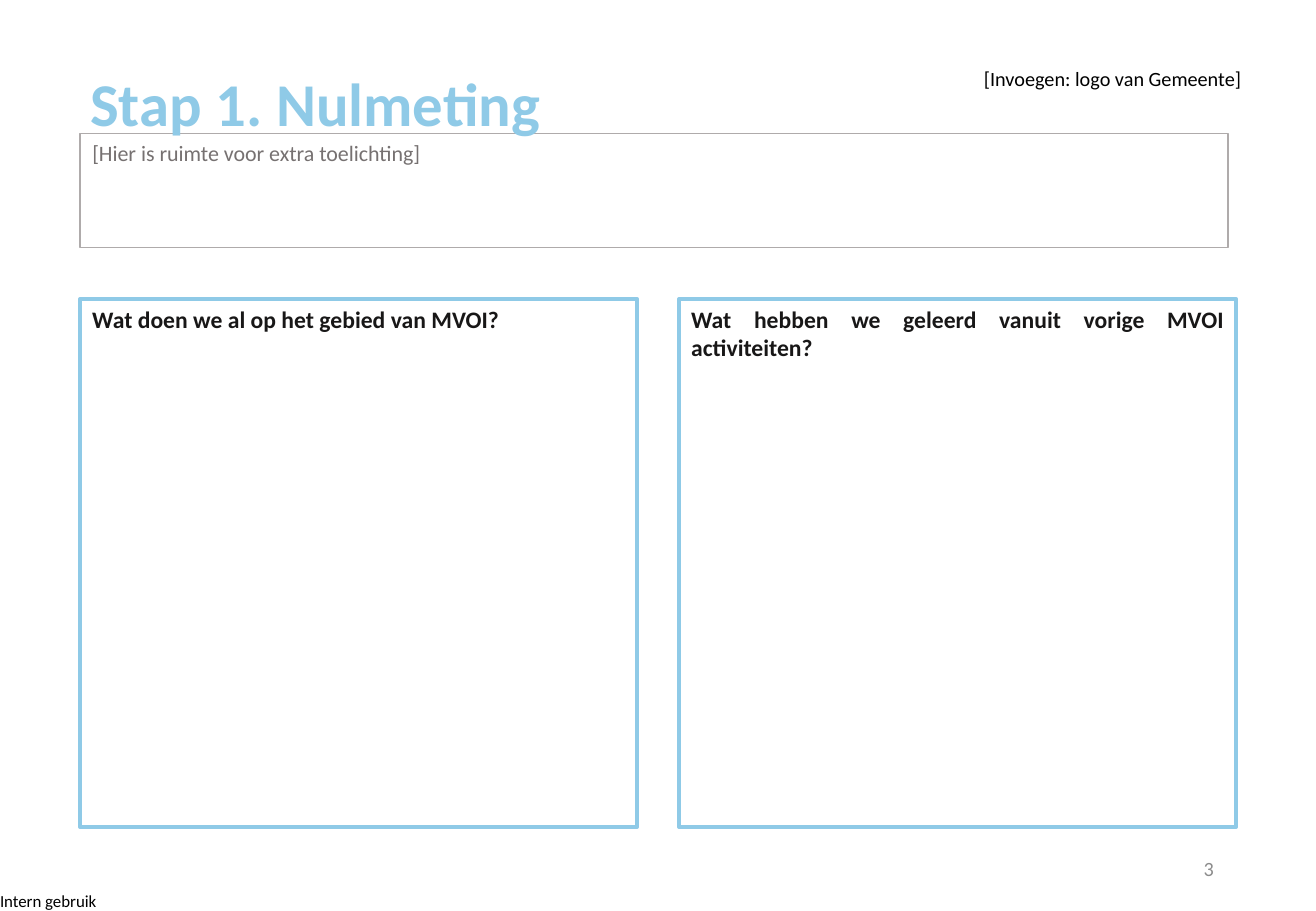
"""Build the 'Stap 1. Nulmeting' slide with an explanation box and two question panels."""
import pptx
import pptx.dml.color
import pptx.enum.shapes
import pptx.enum.text
import pptx.util

Pt = pptx.util.Pt
ALIGN = pptx.enum.text.PP_ALIGN
ANCHOR = pptx.enum.text.MSO_ANCHOR
RECTANGLE = pptx.enum.shapes.MSO_SHAPE.RECTANGLE
SKY = "8FCAE7"
BLACK = "000000"


def paint(color_format, value):
    """Apply a hex colour to a fill, line or font."""
    color_format.rgb = pptx.dml.color.RGBColor.from_string(value)


def write(shape, text, size, color, align=ALIGN.LEFT, anchor=ANCHOR.TOP, bold=False):
    """Put one formatted paragraph into a shape."""
    frame = shape.text_frame
    frame.word_wrap = True
    frame.vertical_anchor = anchor
    frame.text = text
    paragraph = frame.paragraphs[0]
    paragraph.alignment = align
    font = paragraph.runs[0].font
    font.name = "Calibri"
    font.size = Pt(size)
    font.bold = bold
    paint(font.color, color)


presentation = pptx.Presentation()
presentation.slide_width = Pt(780)
presentation.slide_height = Pt(540)
slide = presentation.slides.add_slide(presentation.slide_layouts[5])
shapes = slide.shapes

classification = shapes.add_textbox(Pt(0), Pt(527.8), Pt(60), Pt(12.2))
write(classification, "Intern gebruik", 10, BLACK)
margins = classification.text_frame
margins.margin_left = margins.margin_right = margins.margin_top = margins.margin_bottom = Pt(0)

page_number = shapes.add_textbox(Pt(551), Pt(500.4), Pt(175.5), Pt(28.8))
write(page_number, "3", 12, "8C8C8C", ALIGN.RIGHT, ANCHOR.MIDDLE)

questions = [
    "Wat doen we al op het gebied van MVOI?",
    "Wat hebben we geleerd vanuit vorige MVOI activiteiten?",
]
for column, question in enumerate(questions):
    panel = shapes.add_shape(RECTANGLE, Pt(47.6 + 355 * column), Pt(177.1), Pt(330), Pt(313.2))
    panel.shadow.inherit = False
    panel.fill.background()
    paint(panel.line.color, SKY)
    panel.line.width = Pt(2.25)
    write(panel, question, 14, "181717", ALIGN.JUSTIFY, bold=True)

explanation = shapes.add_shape(RECTANGLE, Pt(47.6), Pt(79.2), Pt(680.4), Pt(67.6))
explanation.shadow.inherit = False
explanation.fill.solid()
paint(explanation.fill.fore_color, "FFFFFF")
paint(explanation.line.color, "AFABAB")
explanation.line.width = Pt(1)
write(explanation, "[Hier is ruimte voor extra toelichting]", 13, "767171")

title = shapes.title
title.left, title.top, title.width, title.height = Pt(47.6), Pt(13.7), Pt(726.4), Pt(72)
write(title, "Stap 1. Nulmeting", 36, SKY, anchor=ANCHOR.BOTTOM, bold=True)
title.text_frame.auto_size = pptx.enum.text.MSO_AUTO_SIZE.NONE
title.text_frame.paragraphs[0].line_spacing = 0.9
title.text_frame.margin_left = title.text_frame.margin_right = Pt(5.8)
title.text_frame.margin_top = title.text_frame.margin_bottom = Pt(2.9)
title.element.getparent().append(title.element)

logo_space = shapes.add_shape(RECTANGLE, Pt(571.7), Pt(20.9), Pt(175.7), Pt(51.1))
logo_space.shadow.inherit = False
logo_space.fill.solid()
paint(logo_space.fill.fore_color, "FFFFFF")
logo_space.line.fill.background()
write(logo_space, "[Invoegen: logo van Gemeente]", 12, BLACK, ALIGN.CENTER, ANCHOR.MIDDLE)

presentation.save("out.pptx")
